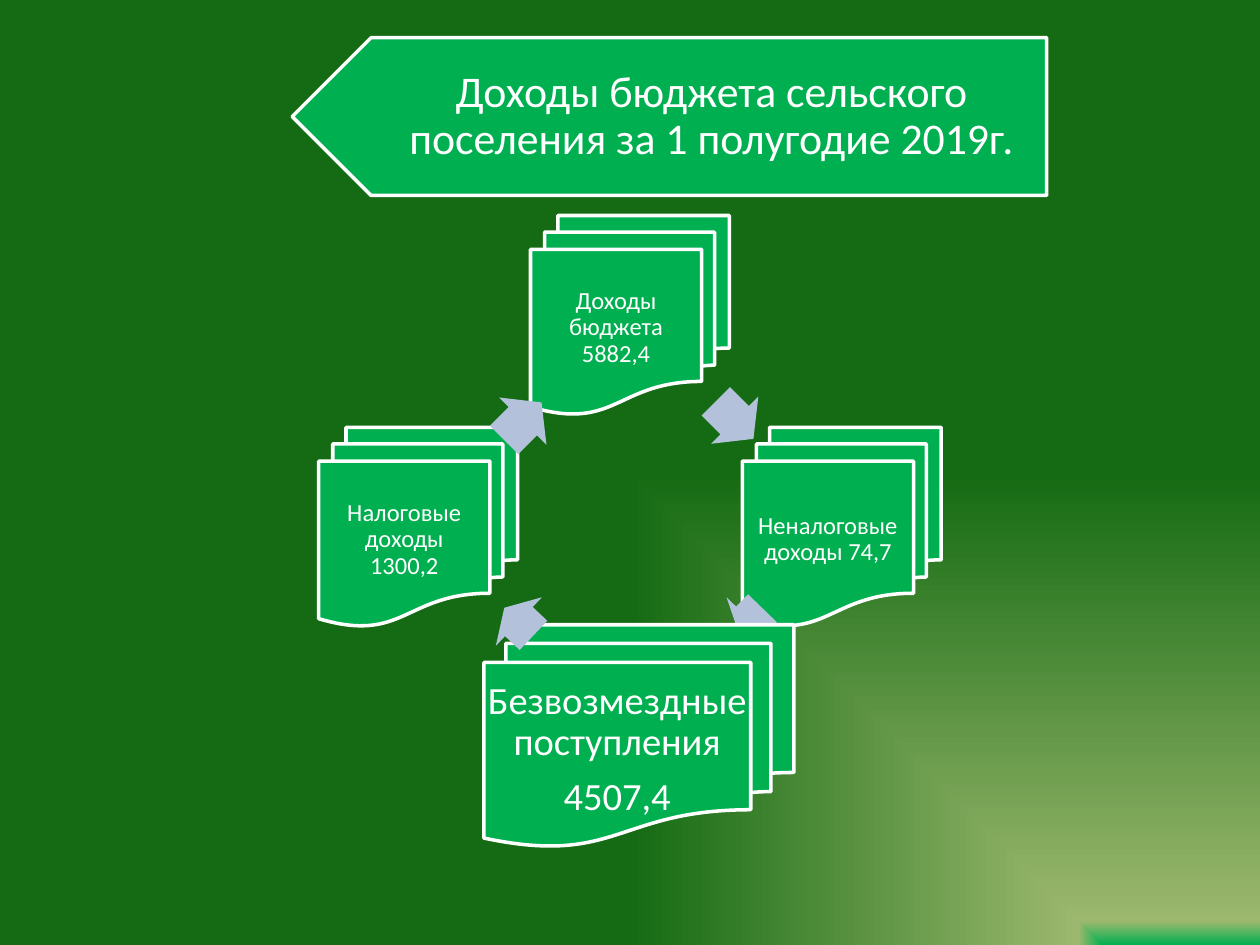
import math

import pptx
import pptx.dml.color
import pptx.enum.shapes
import pptx.enum.text
import pptx.oxml
import pptx.oxml.ns
import pptx.util

Cm, Pt = pptx.util.Cm, pptx.util.Pt
RGBColor = pptx.dml.color.RGBColor
MSO_SHAPE = pptx.enum.shapes.MSO_SHAPE

GREEN = RGBColor(0x00, 0xB0, 0x50)
WHITE = RGBColor(0xFF, 0xFF, 0xFF)
ARROW_BLUE = RGBColor(0xB3, 0xC1, 0xDB)
LIGHT_GREEN = RGBColor(0x9C, 0xB8, 0x6E)
DARK_GREEN = RGBColor(0x15, 0x6B, 0x13)
BACKGROUND_STOPS = [(0, GREEN), (5, LIGHT_GREEN), (100, DARK_GREEN)]

# Content
TITLE = "Доходы бюджета сельского поселения за 1 полугодие 2019г."
# Clockwise from the top: paragraphs, font size, width, height, shift off the ring
INCOMES = [
    (["Доходы\vбюджета\v5882,4"], 14, 4.01, 4.01, (0, 0)),
    (["Неналоговые доходы 74,7"], 14, 4.01, 4.01, (0, 0)),
    (["Безвозмездные поступления", "4507,4"], 22, 6.25, 4.47, (0.18, -0.06)),
    (["Налоговые\vдоходы\v1300,2"], 14, 4.01, 4.01, (0, 0)),
]
# The arrow after each income: centre x, centre y, length, rotation
ARROWS = [
    (14.81, 8.47, 1.07, 45),
    (15.13, 12.51, 0.69, 134.1),
    (10.46, 12.53, 0.81, 223.5),
    (10.54, 8.49, 1.07, 315),
]
ARROW_WIDTH = 1.35
RING_X, RING_Y, RING_RADIUS = 12.7, 10.62, 4.27
# Front page of a stack of documents, as shares of the stack
PAGE_TOP, PAGE_WIDTH, PAGE_HEIGHT = 0.17, 0.86, 0.79

presentation = pptx.Presentation()
presentation.slide_width, presentation.slide_height = Cm(25.4), Cm(19.05)
slide = presentation.slides.add_slide(presentation.slide_layouts[6])


def paint_background():
    fill = slide.background.fill
    fill.gradient()
    stops = "".join(
        f'<a:gs pos="{pos * 1000}"><a:srgbClr val="{color}"/></a:gs>'
        for pos, color in BACKGROUND_STOPS
    )
    gradient = pptx.oxml.parse_xml(
        f'<a:gradFill {pptx.oxml.ns.nsdecls("a")} rotWithShape="1">'
        f'<a:gsLst>{stops}</a:gsLst><a:path path="rect">'
        '<a:fillToRect l="100000" t="100000"/></a:path></a:gradFill>'
    )
    old = slide.background._cSld.find(".//" + pptx.oxml.ns.qn("a:gradFill"))
    old.getparent().replace(old, gradient)


def add_figure(kind, left, top, width, height, color, outlined=True, rotation=0):
    figure = slide.shapes.add_shape(kind, Cm(left), Cm(top), Cm(width), Cm(height))
    figure.shadow.inherit = False
    figure.rotation = rotation
    figure.fill.solid()
    figure.fill.fore_color.rgb = color
    if outlined:
        figure.line.color.rgb = WHITE
        figure.line.width = Pt(2)
    else:
        figure.line.fill.background()
    return figure


def add_caption(paragraphs, size, left, top, width, height, insets):
    box = slide.shapes.add_textbox(Cm(left), Cm(top), Cm(width), Cm(height))
    frame = box.text_frame
    frame.word_wrap = True
    frame.vertical_anchor = pptx.enum.text.MSO_ANCHOR.MIDDLE
    (frame.margin_left, frame.margin_top,
     frame.margin_right, frame.margin_bottom) = map(Cm, insets)
    frame.text = "\n".join(paragraphs)
    for paragraph in frame.paragraphs:
        paragraph.alignment = pptx.enum.text.PP_ALIGN.CENTER
        paragraph.line_spacing = 0.9
        paragraph.space_after = Pt(0.35 * size)
        paragraph.font.name = "Calibri"
        paragraph.font.size = Pt(size)
        paragraph.font.color.rgb = WHITE


paint_background()

# Title banner, pointing left
add_figure(MSO_SHAPE.PENTAGON, 5.89, 0.76, 15.21, 3.18, GREEN, rotation=180)
add_caption([TITLE], 25, 6.68, 0.76, 14.4, 3.18, (1.4, 0.25, 0.48, 0.25))

# Ring of incomes, each followed by its arrow
for index, (income, arrow) in enumerate(zip(INCOMES, ARROWS)):
    paragraphs, size, width, height, (shift_x, shift_y) = income
    angle = 2 * math.pi * index / len(INCOMES)
    left = RING_X + RING_RADIUS * math.sin(angle) + shift_x - width / 2
    top = RING_Y - RING_RADIUS * math.cos(angle) + shift_y - height / 2
    add_figure(MSO_SHAPE.FLOWCHART_MULTIDOCUMENT, left, top, width, height, GREEN)
    add_caption(paragraphs, size, left, top + PAGE_TOP * height,
                PAGE_WIDTH * width, PAGE_HEIGHT * height, (0.05,) * 4)

    x, y, length, rotation = arrow
    pointer = add_figure(MSO_SHAPE.RIGHT_ARROW, x - length / 2, y - ARROW_WIDTH / 2,
                         length, ARROW_WIDTH, ARROW_BLUE, False, rotation)
    pointer.adjustments[0] = 0.6
    pointer.adjustments[1] = 0.5

presentation.save("out.pptx")
